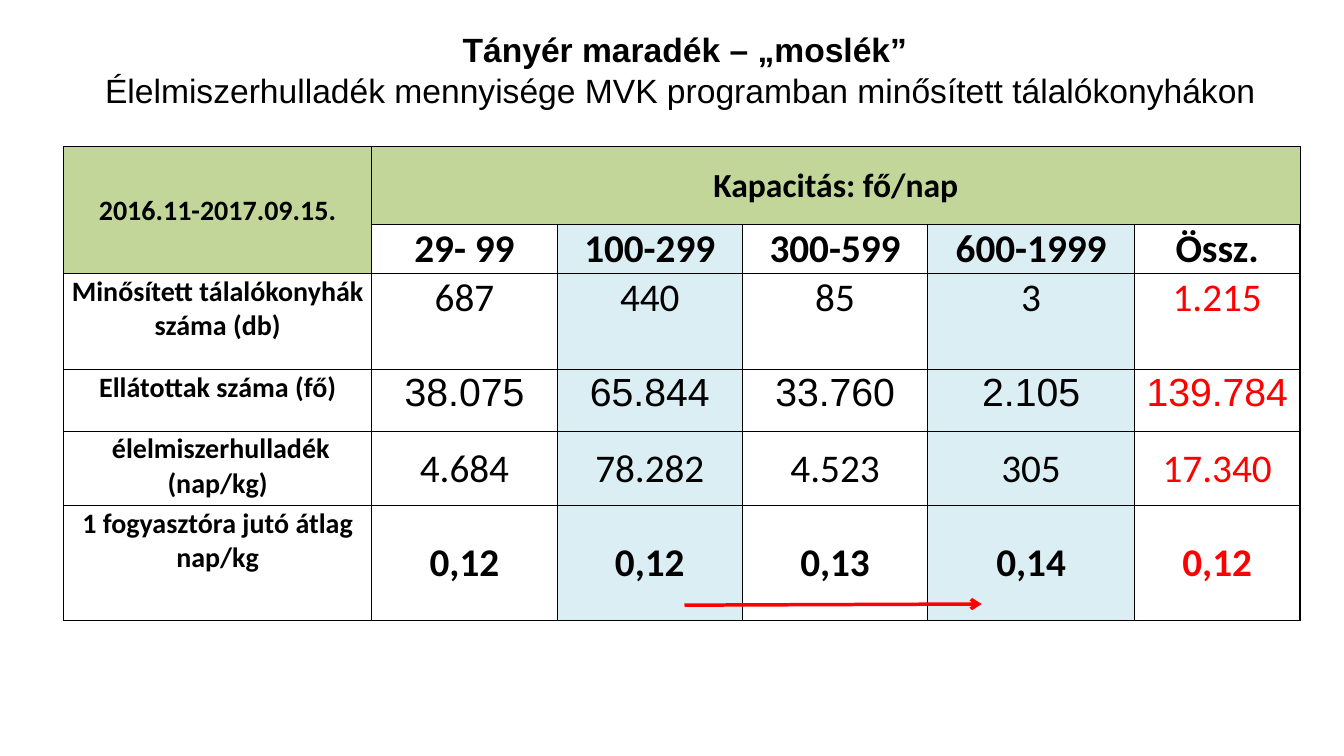
from pptx import Presentation
from pptx import util as u
from pptx.dml.color import RGBColor
from pptx.enum import shapes, text
from pptx.oxml.ns import qn
from lxml import etree

Cm, Pt = u.Cm, u.Pt
BLACK, RED, GREEN, BLUE = "000000", "FF0000", "C2D69A", "DBEEF3"
TOP, MID, LOW = text.MSO_ANCHOR.TOP, text.MSO_ANCHOR.MIDDLE, text.MSO_ANCHOR.BOTTOM
WIDTHS = [7.77, 4.67, 4.67, 4.67, 5.21, 4.17]
HEIGHTS = [1.96, 1.24, 2.42, 1.55, 1.87, 2.9]
HEADS = ["29- 99", "100-299", "300-599", "600-1999", "Össz."]
ROWS = [
    ("Minősített tálalókonyhák száma (db)",
     ["687", "440", "85", "3", "1.215"], dict(anchor=TOP)),
    ("Ellátottak száma (fő)",
     ["38.075", "65.844", "33.760", "2.105", "139.784"], dict(anchor=TOP, font="Arial")),
    (" élelmiszerhulladék (nap/kg)",
     ["4.684", "78.282", "4.523", "305", "17.340"], dict(anchor=MID)),
    ("1 fogyasztóra jutó átlag nap/kg",
     ["0,12", "0,12", "0,13", "0,14", "0,12"], dict(anchor=MID, bold=True)),
]


def paint(code):
    return RGBColor.from_string(code)


def write(para, words, size=28, font="Calibri", bold=False, color=BLACK):
    para.alignment = text.PP_ALIGN.CENTER
    run = para.add_run()
    run.text = words
    run.font.size, run.font.name, run.font.bold = Pt(size), font, bold
    run.font.color.rgb = paint(color)


def edge(cell, side, width):
    line = etree.SubElement(cell._tc.get_or_add_tcPr(), qn("a:ln" + side), w=str(Pt(width)))
    fill = etree.SubElement(line, qn("a:solidFill"))
    etree.SubElement(fill, qn("a:srgbClr"), val=BLACK)


def frame(grid):
    last = len(HEIGHTS) - 1
    end = len(WIDTHS) - 1
    for row in range(last + 1):
        for col in range(end + 1):
            cell = grid.cell(row, col)
            outer = {"L": col == 0, "R": col == end, "T": row == 0, "B": row == last}
            for side, thick in outer.items():
                edge(cell, side, 1 if thick else 0.5)
            if row == 0 or (row == 1 and col == 0):
                tint = GREEN
            else:
                tint = BLUE if col in (2, 4) else None
            if tint:
                cell.fill.solid()
                cell.fill.fore_color.rgb = paint(tint)
            else:
                cell.fill.background()


def enter(cell, words, anchor=MID, **style):
    cell.vertical_anchor = anchor
    cell.margin_left = cell.margin_right = cell.margin_top = Cm(0.03)
    cell.margin_bottom = 0
    write(cell.text_frame.paragraphs[0], words, **style)


def title(slide, left, top, width, height):
    box = slide.shapes.title
    box.left, box.top, box.width, box.height = map(Cm, (left, top, width, height))
    body = box.text_frame
    body.word_wrap = True
    body.auto_size = text.MSO_AUTO_SIZE.NONE
    body.vertical_anchor = TOP
    write(body.paragraphs[0], "Tányér maradék – „moslék”", size=24, font="Arial", bold=True)
    write(body.add_paragraph(),
          "Élelmiszerhulladék mennyisége MVK programban minősített tálalókonyhákon ",
          size=24, font="Arial")


def table(slide, left, top):
    grid = slide.shapes.add_table(
        len(HEIGHTS), len(WIDTHS), Cm(left), Cm(top),
        Cm(sum(WIDTHS)), Cm(sum(HEIGHTS))).table
    grid.first_row = grid.horz_banding = False
    for col, width in zip(grid.columns, WIDTHS):
        col.width = Cm(width)
    for row, height in zip(grid.rows, HEIGHTS):
        row.height = Cm(height)
    frame(grid)
    grid.cell(0, 0).merge(grid.cell(1, 0))
    grid.cell(0, 1).merge(grid.cell(0, 5))
    enter(grid.cell(0, 0), "2016.11-2017.09.15.", size=20, bold=True)
    enter(grid.cell(0, 1), "Kapacitás: fő/nap", size=24, bold=True)
    for col, head in enumerate(HEADS, 1):
        enter(grid.cell(1, col), head, anchor=MID if col < 3 else LOW, bold=True)
    for row, (label, values, style) in enumerate(ROWS, 2):
        enter(grid.cell(row, 0), label, anchor=TOP, size=20, bold=True)
        for col, value in enumerate(values, 1):
            enter(grid.cell(row, col), value, color=RED if col == 5 else BLACK, **style)


def trend(slide, left, top):
    base = top + sum(HEIGHTS)
    line = slide.shapes.add_connector(
        shapes.MSO_CONNECTOR.STRAIGHT,
        Cm(left + 15.65), Cm(base - 0.38), Cm(left + 23.14), Cm(base - 0.41))
    line.line.color.rgb = paint(RED)
    line.line.width = Pt(2.5)
    etree.SubElement(line.line._get_or_add_ln(), qn("a:tailEnd"), type="arrow")
    etree.SubElement(line._element.spPr, qn("a:effectLst"))


def main():
    deck = Presentation()
    deck.slide_width, deck.slide_height = Cm(33.87), Cm(19.05)
    slide = deck.slides.add_slide(deck.slide_layouts[5])
    title(slide, 1.7, 0.61, 31.12, 2.31)
    table(slide, 1.6, 3.69)
    trend(slide, 1.6, 3.69)
    deck.save("out.pptx")


if __name__ == "__main__":
    main()
